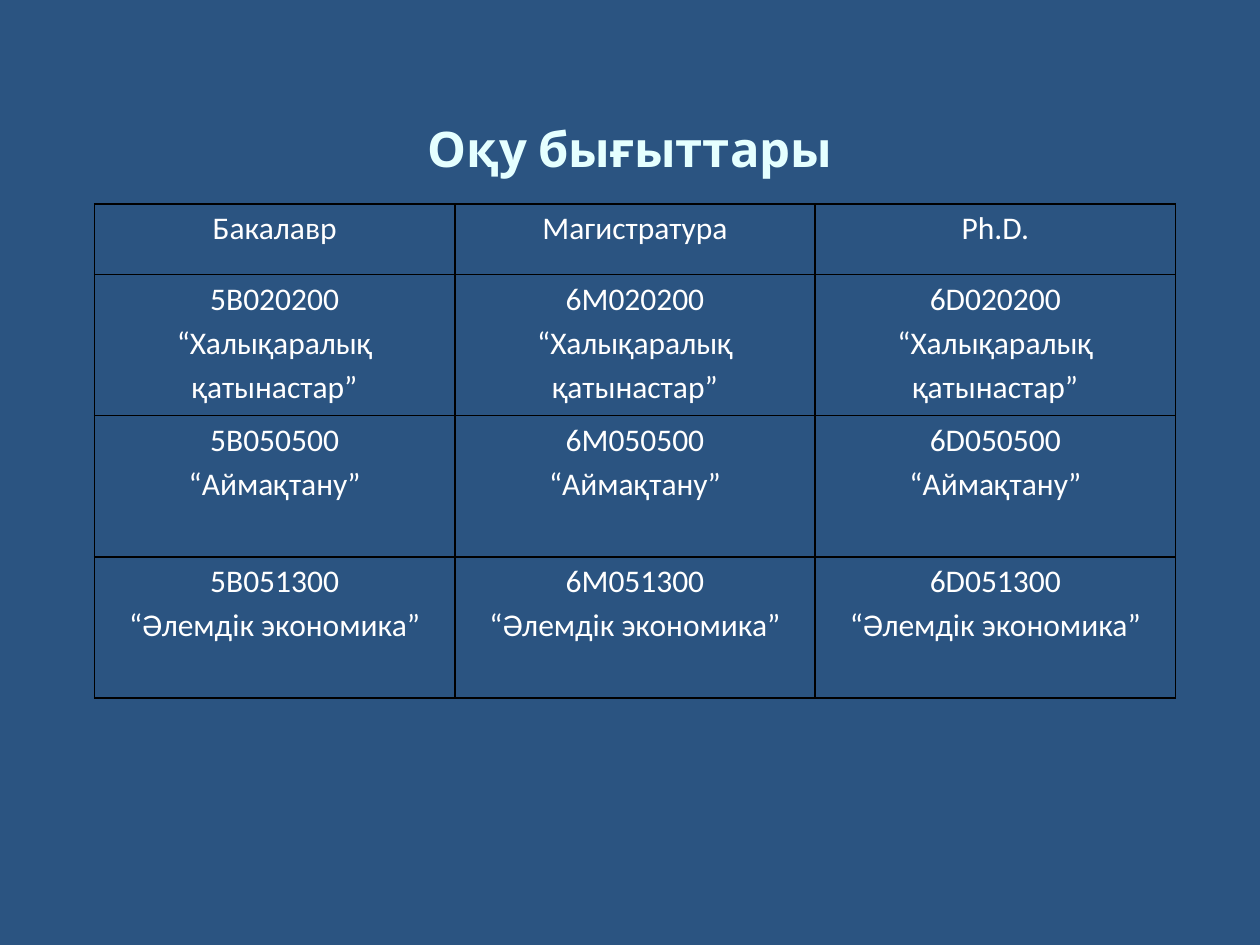
from dataclasses import dataclass

from lxml.etree import SubElement
from pptx import Presentation
from pptx.dml.color import RGBColor
from pptx.enum.text import MSO_ANCHOR, PP_ALIGN
from pptx.oxml.ns import qn
from pptx.util import Inches, Pt

COLORS = {"background": "2B5481", "title": "E5FFFF", "text": "FFFFFF", "border": "000000"}
TITLE_FONT = {"name": "Cabin", "size": Pt(28), "bold": True}
CELL_FONT = {"name": "Calibri", "size": Pt(18), "bold": False}
CELL_FORMAT = {
    "margin_left": Inches(0.07), "margin_right": Inches(0.07),
    "margin_top": 0, "margin_bottom": 0, "vertical_anchor": MSO_ANCHOR.TOP,
}
PARAGRAPH_FORMAT = {"alignment": PP_ALIGN.CENTER, "line_spacing": 1.15}
COLUMN_WIDTH = Inches(2.86)
ROW_UNIT = Inches(0.56)


@dataclass
class Level:
    name: str
    code_prefix: str


@dataclass
class Program:
    code: str
    name: str


LEVELS = [Level("Бакалавр", "5B"), Level("Магистратура", "6M"), Level("Ph.D.", "6D")]
PROGRAMS = [
    Program("020200", "“Халықаралық қатынастар”"),
    Program("050500", "“Аймақтану”"),
    Program("051300", "“Әлемдік экономика”"),
]


def apply_format(target, values: dict) -> None:
    for name, value in values.items():
        setattr(target, name, value)


def format_font(font, values: dict, color: str) -> None:
    apply_format(font, values)
    font.color.rgb = RGBColor.from_string(COLORS[color])


def add_borders(cell) -> None:
    properties = cell._tc.get_or_add_tcPr()
    for index, side in enumerate(("lnL", "lnR", "lnT", "lnB")):
        line = properties.makeelement(qn(f"a:{side}"), {"w": str(Pt(1))})
        fill = SubElement(line, qn("a:solidFill"))
        SubElement(fill, qn("a:srgbClr"), val=COLORS["border"])
        properties.insert(index, line)


def fill_cell(cell, lines: list[str]) -> None:
    apply_format(cell, CELL_FORMAT)
    cell.fill.background()
    add_borders(cell)
    cell.text = "\n".join(lines)
    for paragraph in cell.text_frame.paragraphs:
        apply_format(paragraph, PARAGRAPH_FORMAT)
        for run in paragraph.runs:
            format_font(run.font, CELL_FONT, "text")


def add_title(slide, text: str, width: int, height: int) -> None:
    title = slide.shapes.title
    apply_format(title, {
        "left": int(width * 0.05), "top": Inches(0.42),
        "width": int(width * 0.9), "height": int(height * 0.2),
    })
    title.text_frame.text = text
    title.text_frame.vertical_anchor = MSO_ANCHOR.MIDDLE
    paragraph = title.text_frame.paragraphs[0]
    paragraph.alignment = PP_ALIGN.CENTER
    format_font(paragraph.runs[0].font, TITLE_FONT, "title")


def add_program_table(slide) -> None:
    row_units = [1] + [2] * len(PROGRAMS)
    table = slide.shapes.add_table(
        len(row_units), len(LEVELS), Inches(0.75), Inches(1.62),
        COLUMN_WIDTH * len(LEVELS), ROW_UNIT * sum(row_units),
    ).table
    apply_format(table, {"first_row": False, "horz_banding": False})
    for row, units in zip(table.rows, row_units):
        row.height = ROW_UNIT * units
    for column, level in enumerate(LEVELS):
        table.columns[column].width = COLUMN_WIDTH
        fill_cell(table.cell(0, column), [level.name])
        for row, program in enumerate(PROGRAMS, start=1):
            fill_cell(table.cell(row, column), [level.code_prefix + program.code, program.name])


def main() -> None:
    presentation = Presentation()
    apply_format(presentation, {"slide_width": Inches(10), "slide_height": Inches(7.5)})
    slide = presentation.slides.add_slide(presentation.slide_layouts[5])

    # Background
    background = slide.background.fill
    background.solid()
    background.fore_color.rgb = RGBColor.from_string(COLORS["background"])

    # Title and table of study programs
    add_title(slide, "Оқу бығыттары", presentation.slide_width, presentation.slide_height)
    add_program_table(slide)
    presentation.save("out.pptx")


if __name__ == "__main__":
    main()
